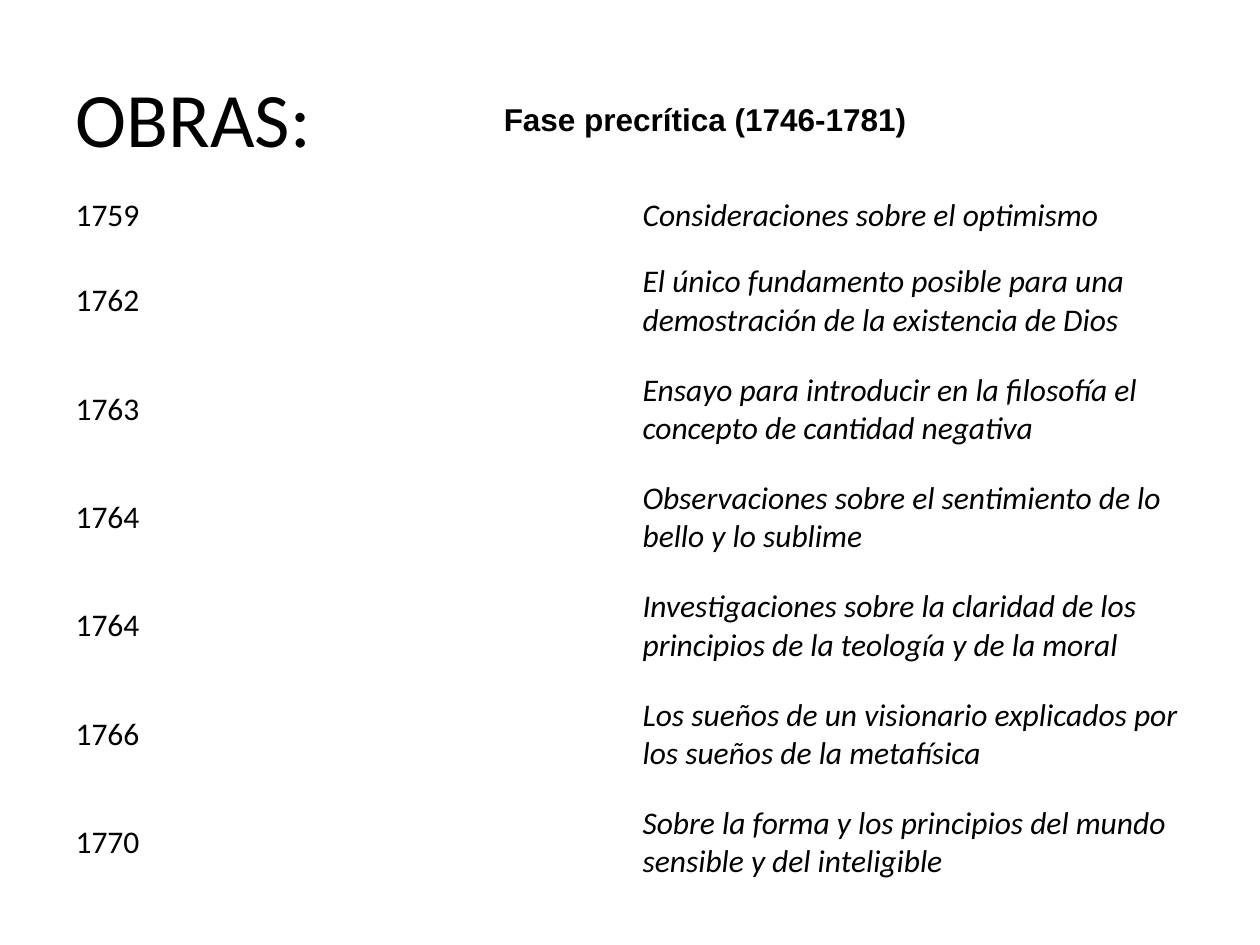
"""Build a slide listing the works of the precritical phase by year."""
from pptx import Presentation
from pptx.dml.color import RGBColor
from pptx.enum.text import MSO_ANCHOR, PP_ALIGN
from pptx.util import Inches, Pt

COLORS = {"text": "000000"}
WORKS = [
    ("1759", "Consideraciones sobre el optimismo"),
    ("1762", "El único fundamento posible para una demostración de la existencia de Dios"),
    ("1763", "Ensayo para introducir en la filosofía el concepto de cantidad negativa"),
    ("1764", "Observaciones sobre el sentimiento de lo bello y lo sublime"),
    ("1764", "Investigaciones sobre la claridad de los principios de la teología y de la moral"),
    ("1766", "Los sueños de un visionario explicados por los sueños de la metafísica"),
    ("1770", "Sobre la forma y los principios del mundo sensible y del inteligible"),
]


def write(text_frame, text, size, font_name="Calibri", bold=False, italic=False):
    """Set left-aligned text and format its run."""
    text_frame.text = text
    paragraph = text_frame.paragraphs[0]
    paragraph.alignment = PP_ALIGN.LEFT
    font = paragraph.runs[0].font
    font.name = font_name
    font.size = Pt(size)
    font.bold = bold
    font.italic = italic
    font.color.rgb = RGBColor.from_string(COLORS["text"])


presentation = Presentation()
presentation.slide_width = Inches(10)
presentation.slide_height = Inches(7.5)
slide = presentation.slides.add_slide(presentation.slide_layouts[5])

title = slide.shapes.title
title.left, title.top = Inches(0.5), Inches(0.3)
title.width, title.height = Inches(9), Inches(1.25)
title.text_frame.vertical_anchor = MSO_ANCHOR.MIDDLE
write(title.text_frame, "OBRAS:", 44)

table_frame = slide.shapes.add_table(
    len(WORKS), 2, Inches(0.5), Inches(1.47), Inches(9), Inches(5.65)
)
table = table_frame.table
table.first_row = False
table.horz_banding = False
for row_index, work in enumerate(WORKS):
    table.rows[row_index].height = Inches(0.86 if row_index else 0.49)
    for column_index, text in enumerate(work):
        cell = table.cell(row_index, column_index)
        cell.fill.background()
        cell.vertical_anchor = MSO_ANCHOR.MIDDLE
        write(cell.text_frame, text, 18, italic=column_index == 1)
table_properties = table_frame._element.graphic.graphicData.tbl.tblPr
style_id = table_properties[0]
style_id.text = "{2D5ABB26-0587-4C30-8999-92F81FD0307C}"

phase = slide.shapes.add_textbox(Inches(3.9), Inches(0.74), Inches(3.43), Inches(0.4))
phase.text_frame.word_wrap = False
phase.text_frame.vertical_anchor = MSO_ANCHOR.MIDDLE
write(phase.text_frame, "Fase precrítica (1746-1781)", 18, "Arial", bold=True)

presentation.save("out.pptx")
